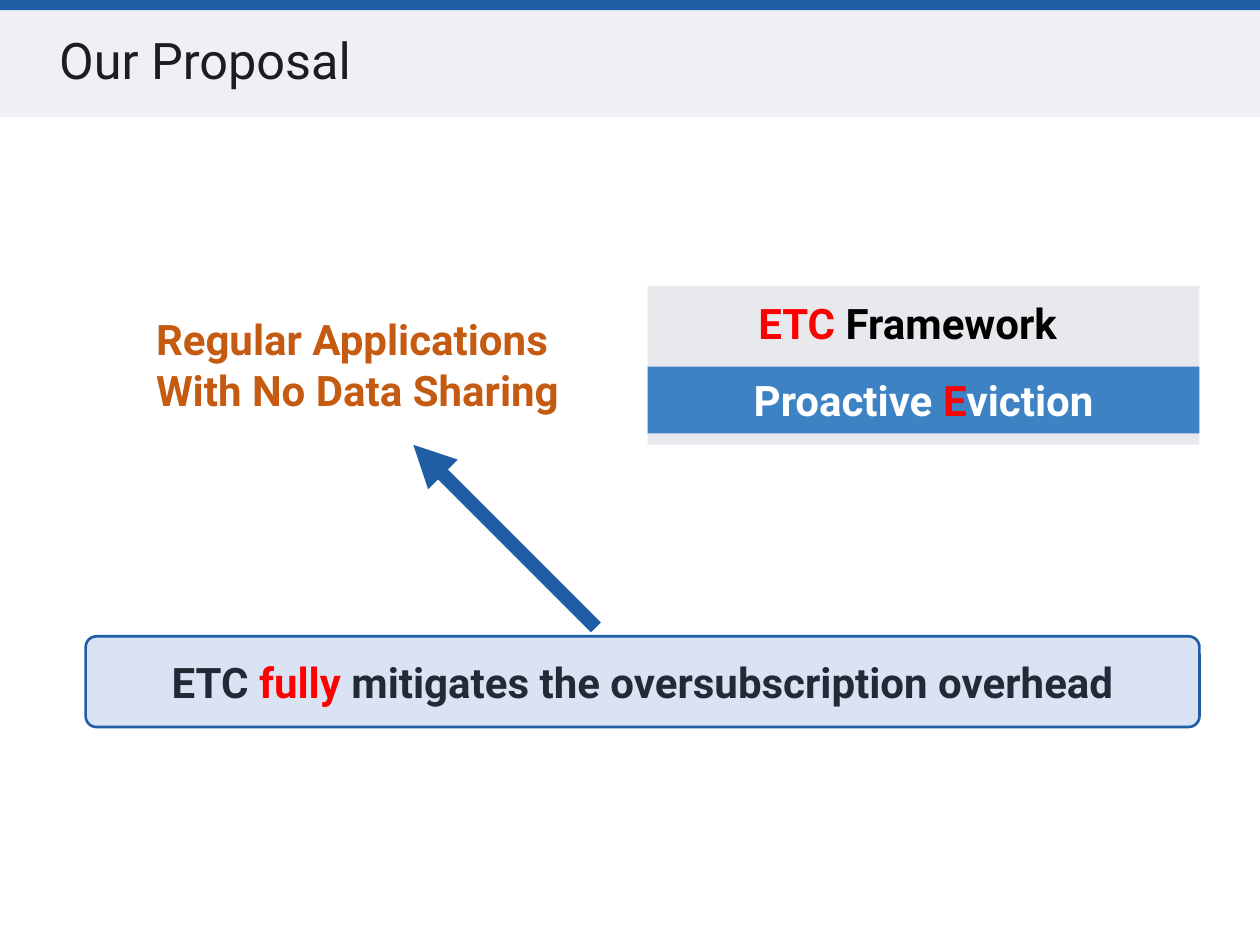
from dataclasses import dataclass

from lxml.etree import SubElement
from pptx import Presentation
from pptx.dml.color import RGBColor
from pptx.enum.shapes import MSO_CONNECTOR, MSO_SHAPE
from pptx.enum.text import MSO_ANCHOR, PP_ALIGN
from pptx.oxml.ns import qn
from pptx.util import Inches, Pt


@dataclass(frozen=True)
class Theme:
    font: str = "Roboto"
    title_size: float = 28.8
    body_size: float = 24
    title: str = "1D1C1F"
    navy: str = "1F5DA5"
    blue: str = "3D83C4"
    header: str = "EFF0F3"
    panel: str = "E7E9ED"
    pale: str = "DAE3F3"
    dark: str = "222A35"
    orange: str = "C55A11"
    red: str = "FF0000"
    white: str = "FFFFFF"
    black: str = "000000"


theme = Theme()


def write(sp, *lines, size=theme.body_size, bold=True, align=PP_ALIGN.LEFT,
          anchor=MSO_ANCHOR.MIDDLE, spacing=None):
    tf = sp.text_frame
    tf.word_wrap = True
    tf.vertical_anchor = anchor
    for i, line in enumerate(lines):
        p = tf.add_paragraph() if i else tf.paragraphs[0]
        p.alignment = align
        p.line_spacing = spacing
        for text, color in line:
            r = p.add_run()
            r.text = text
            r.font.name = theme.font
            r.font.size = Pt(size)
            r.font.bold = bold
            r.font.color.rgb = RGBColor.from_string(color)


def add_box(box, fill, kind=MSO_SHAPE.RECTANGLE):
    sp = s.shapes.add_shape(kind, *map(Inches, box))
    sp.shadow.inherit = False
    sp.fill.solid()
    sp.fill.fore_color.rgb = RGBColor.from_string(fill)
    sp.line.fill.background()
    return sp


prs = Presentation()
prs.slide_width, prs.slide_height = Inches(10), Inches(7.5)
s = prs.slides.add_slide(prs.slide_layouts[5])

add_box((0, 0.08, 10, 0.85), theme.header)
top_bar = add_box((0, 0, 10, 0.08), theme.navy)

title = s.shapes.title
title.left, title.top, title.width, title.height = map(Inches, (0.37, 0.08, 2.76, 0.85))
write(title, [("Our Proposal", theme.title)], size=theme.title_size, bold=False, spacing=0.9)
top_bar.element.addnext(title.element)

add_box((5.14, 2.27, 4.38, 1.26), theme.panel)
eviction = add_box((5.14, 2.91, 4.38, 0.53), theme.blue)
write(eviction, [("Proactive ", theme.white), ("E", theme.red), ("viction", theme.white)],
      align=PP_ALIGN.CENTER)

framework = s.shapes.add_textbox(*map(Inches, (5.92, 2.31, 2.83, 0.5)))
write(framework, [("ETC ", theme.red), ("Framework", theme.black)], anchor=MSO_ANCHOR.TOP)

applications = s.shapes.add_textbox(*map(Inches, (1.14, 2.44, 3.84, 0.91)))
write(applications, [("Regular Applications", theme.orange)],
      [("With No Data Sharing", theme.orange)], anchor=MSO_ANCHOR.TOP)

result = add_box((0.68, 5.05, 8.84, 0.72), theme.pale, MSO_SHAPE.ROUNDED_RECTANGLE)
result.adjustments[0] = 0.12
result.line.color.rgb = RGBColor.from_string(theme.navy)
result.line.width = Pt(1.5)
write(result, [("ETC ", theme.dark), ("fully", theme.red),
               (" mitigates the oversubscription overhead", theme.dark)],
      align=PP_ALIGN.CENTER)

arrow = s.shapes.add_connector(MSO_CONNECTOR.STRAIGHT, *map(Inches, (4.73, 4.98, 3.28, 3.53)))
arrow.line.color.rgb = RGBColor.from_string(theme.navy)
arrow.line.width = Pt(8)
SubElement(arrow.line._get_or_add_ln(), qn("a:tailEnd"), type="triangle")
SubElement(arrow.element.spPr, qn("a:effectLst"))

prs.save("out.pptx")
